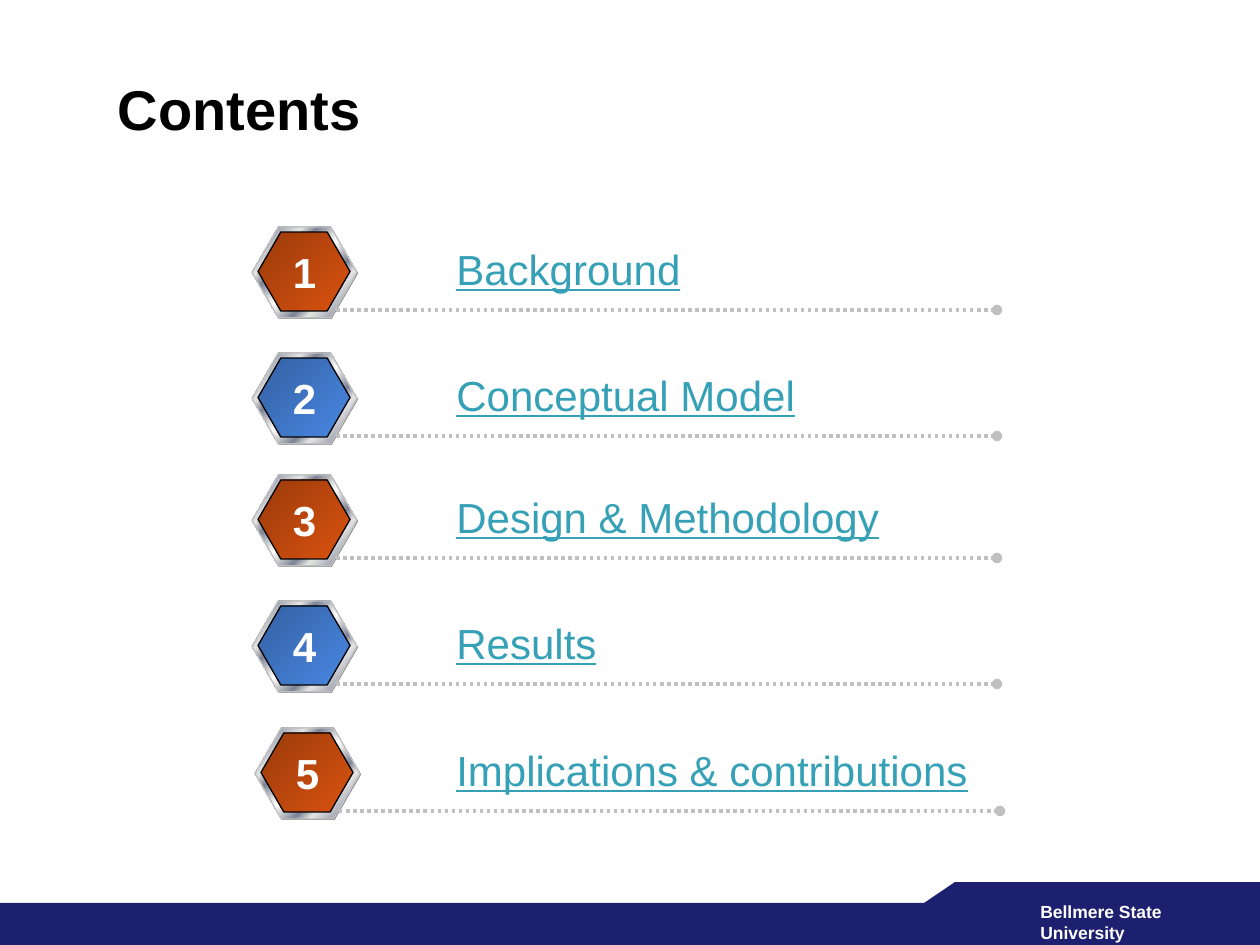
from dataclasses import dataclass

from pptx import Presentation
from pptx.dml.color import RGBColor
from pptx.enum.dml import MSO_LINE_DASH_STYLE as Dash
from pptx.enum.shapes import MSO_CONNECTOR, MSO_SHAPE
from pptx.enum.text import MSO_ANCHOR, MSO_AUTO_SIZE, PP_ALIGN
from pptx.oxml.ns import qn
from pptx.oxml.xmlchemy import OxmlElement
from pptx.util import Pt

EMU_PER_PX = 914400 / 126
FONT = "Arial"
COLORS = {
    "navy": "1D1F6F", "black": "000000", "white": "FFFFFF", "link": "36A1B6",
    "silver": "C0C0C0", "shade": "808080", "light": "E6E6E6", "steel": "7D8496",
    "rust_dark": "9B3B0B", "rust": "D9520F",
    "blue_dark": "3461A2", "blue": "4987E3",
}
Stops = list[tuple[int, str]]
RUST: Stops = [(0, "rust_dark"), (100, "rust")]
BLUE: Stops = [(0, "blue_dark"), (100, "blue")]
METAL: Stops = [
    (0, "light"), (7, "steel"), (26, "light"), (34, "steel"), (46, "light"),
    (50, "white"), (54, "light"), (66, "steel"), (74, "light"), (93, "steel"),
    (100, "light"),
]
TOPIC_LEFT = 444


@dataclass(frozen=True)
class Entry:
    number: int
    topic: str
    left: int
    top: int
    topic_width: int
    face: Stops


ENTRIES = [
    Entry(1, "Background", 252, 227, 252, RUST),
    Entry(2, "Conceptual Model", 252, 353, 368, BLUE),
    Entry(3, "Design & Methodology", 252, 475, 452, RUST),
    Entry(4, "Results", 252, 601, 168, BLUE),
    Entry(5, "Implications & contributions", 255, 728, 542, RUST),
]


def px(value: int) -> int:
    return round(value * EMU_PER_PX)


def box(*lengths: int) -> list[int]:
    return [px(length) for length in lengths]


def rgb(name: str) -> RGBColor:
    return RGBColor.from_string(COLORS[name])


def paint(shape, color: str) -> None:
    shape.shadow.inherit = False
    shape.fill.solid()
    shape.fill.fore_color.rgb = rgb(color)
    shape.line.fill.background()


def paint_gradient(shape, stops: Stops, outline: str) -> None:
    shape.shadow.inherit = False
    shape.fill.gradient()
    shape.fill.gradient_angle = 315
    stop_list = shape._element.spPr.find(".//" + qn("a:gsLst"))
    for old in list(stop_list):
        stop_list.remove(old)
    for percent, color in stops:
        stop = OxmlElement("a:gs")
        stop.set("pos", str(percent * 1000))
        value = OxmlElement("a:srgbClr")
        value.set("val", COLORS[color])
        stop.append(value)
        stop_list.append(stop)
    shape.line.color.rgb = rgb(outline)
    shape.line.width = Pt(0.75)


def add_hexagon(shapes, left: int, top: int, width: int, height: int):
    hexagon = shapes.add_shape(MSO_SHAPE.HEXAGON, *box(left, top, width, height))
    hexagon.adjustments[0] = 0.289
    return hexagon


def add_label(shapes, text: str, place: list[int], size: int, color: str,
              bold: bool = False, underline: bool = False,
              align: PP_ALIGN = PP_ALIGN.LEFT) -> None:
    frame = shapes.add_textbox(*place).text_frame
    frame.word_wrap = False
    frame.auto_size = MSO_AUTO_SIZE.SHAPE_TO_FIT_TEXT
    line = frame.paragraphs[0]
    line.text = text
    line.alignment = align
    line.font.name, line.font.size = FONT, Pt(size)
    line.font.bold, line.font.underline = bold, underline
    line.font.color.rgb = rgb(color)


def add_leader(shapes, left: int, top: int, length: int) -> None:
    leader = shapes.add_connector(MSO_CONNECTOR.STRAIGHT,
                                  *box(left, top, left + length, top))
    leader.line.color.rgb = rgb("silver")
    leader.line.width = Pt(2)
    leader.line.dash_style = Dash.ROUND_DOT
    properties = leader._element.spPr
    dot = OxmlElement("a:tailEnd")
    dot.set("type", "oval")
    properties.find(qn("a:ln")).append(dot)
    properties.append(OxmlElement("a:effectLst"))


def add_entry(slide, entry: Entry) -> None:
    shapes = slide.shapes.add_group_shape().shapes
    left, top = entry.left, entry.top
    paint(add_hexagon(shapes, left + 1, top + 1, 105, 91), "shade")
    paint_gradient(add_hexagon(shapes, left, top, 105, 91), METAL, "silver")
    paint_gradient(add_hexagon(shapes, left + 6, top + 5, 92, 79),
                   entry.face, "black")
    add_leader(shapes, left + 84, top + 83, 661)
    add_label(shapes, entry.topic,
              box(TOPIC_LEFT, top + 10, entry.topic_width, 64),
              24, "link", underline=True)
    add_label(shapes, str(entry.number), box(left + 28, top + 13, 49, 63),
              24, "white", bold=True, align=PP_ALIGN.CENTER)


def add_footer(slide) -> None:
    shapes = slide.shapes
    paint(shapes.add_shape(MSO_SHAPE.RECTANGLE, *box(0, 903, 1260, 42)), "navy")
    outline = shapes.build_freeform(px(924), px(903), scale=1.0)
    corners = [(955, 882), (1260, 882), (1260, 914), (924, 914)]
    outline.add_line_segments([(px(x), px(y)) for x, y in corners], close=True)
    paint(outline.convert_to_shape(), "navy")
    add_label(shapes, "Bellmere State University", box(1028, 895, 219, 34),
              10, "white", bold=True)


def set_title(slide, text: str) -> None:
    title = slide.shapes.title
    title.left, title.top, title.width, title.height = box(105, 69, 1081, 78)
    frame = title.text_frame
    frame.text = text
    frame.vertical_anchor = MSO_ANCHOR.MIDDLE
    frame.auto_size = MSO_AUTO_SIZE.NONE
    heading = frame.paragraphs[0]
    heading.alignment = PP_ALIGN.LEFT
    heading.font.name, heading.font.size = FONT, Pt(32)
    heading.font.bold = True
    heading.font.color.rgb = rgb("black")


def main() -> None:
    deck = Presentation()
    deck.slide_width, deck.slide_height = box(1260, 945)
    slide = deck.slides.add_slide(deck.slide_layouts[5])

    # Title and footer band
    set_title(slide, "Contents")
    add_footer(slide)

    # Numbered topics
    for entry in ENTRIES:
        add_entry(slide, entry)

    deck.save("out.pptx")


if __name__ == "__main__":
    main()
